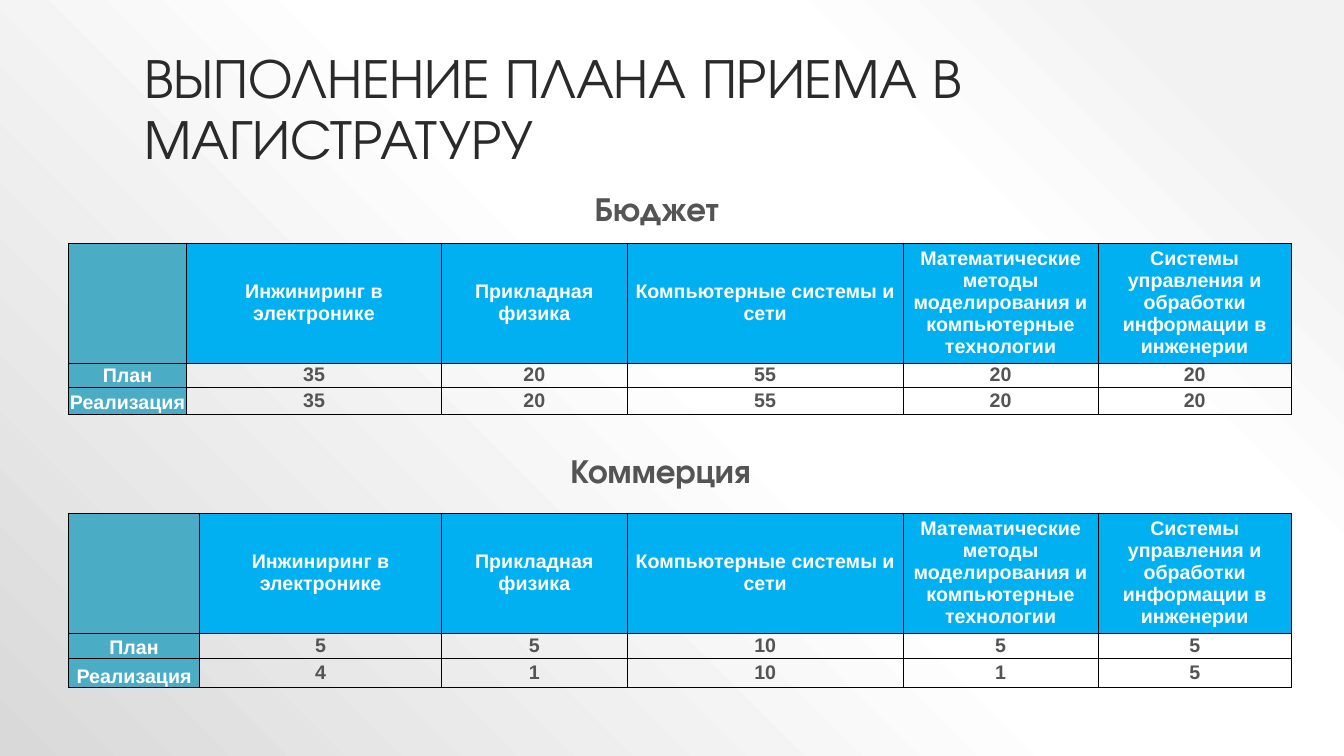
from lxml import etree
from pptx import Presentation
from pptx.dml.color import RGBColor
from pptx.enum.text import MSO_ANCHOR, MSO_AUTO_SIZE, PP_ALIGN
from pptx.oxml import parse_xml
from pptx.oxml.ns import qn
from pptx.util import Inches, Pt

MIDDLE, BOTTOM = MSO_ANCHOR.MIDDLE, MSO_ANCHOR.BOTTOM
LEFT, CENTER = PP_ALIGN.LEFT, PP_ALIGN.CENTER
NO_AUTOFIT, GROW = MSO_AUTO_SIZE.NONE, MSO_AUTO_SIZE.SHAPE_TO_FIT_TEXT

COLORS = {
    "title": "2A2A2A",
    "text": "545454",
    "white": "FFFFFF",
    "header": "00B0F0",
    "label": "4BACC6",
    "border": "000000",
    "mist": "F2F2F2",
    "gray": "D9D9D9",
}
BACKDROP = [(10, "mist"), (28, "white"), (48, "white"), (100, "gray")]
HEADING_FONT, TABLE_FONT = "TeX Gyre Adventor", "Arial"
DRAWING_NS = "http://schemas.openxmlformats.org/drawingml/2006/main"

PROGRAMS = [
    "Инжиниринг в электронике",
    "Прикладная физика",
    "Компьютерные системы и сети",
    "Математические методы моделирования и компьютерные технологии",
    "Системы управления и обработки информации в инженерии",
]
SHARED_WIDTHS = [1.84, 2.74, 1.93, 1.92]


class Page:
    def __init__(self, deck):
        self.slide = deck.slides.add_slide(deck.slide_layouts[5])
        self.shapes = self.slide.shapes

    def backdrop(self, stops):
        """Fill the background with a gradient spreading from the top right corner."""
        self.slide.background.fill.solid()
        marks = "".join(
            f'<a:gs pos="{place * 1000}"><a:srgbClr val="{COLORS[color]}"/></a:gs>'
            for place, color in stops)
        gradient = parse_xml(
            f'<a:gradFill xmlns:a="{DRAWING_NS}" rotWithShape="1">'
            f'<a:gsLst>{marks}</a:gsLst><a:path path="circle">'
            '<a:fillToRect l="100000" b="100000"/></a:path></a:gradFill>')
        properties = self.slide.element.find(".//" + qn("p:bgPr"))
        properties.replace(properties.find(qn("a:solidFill")), gradient)

    def put_text(self, frame, text, size, font, color, bold=False, align=LEFT, spacing=None):
        frame.text = text
        para = frame.paragraphs[0]
        para.alignment = align
        if spacing:
            para.line_spacing = spacing
        for span in para.runs:
            span.font.size = Pt(size)
            span.font.name = font
            span.font.bold = bold
            span.font.color.rgb = RGBColor.from_string(COLORS[color])

    def title(self, text, left, top, width, height):
        box = self.shapes.title
        box.left, box.top = Inches(left), Inches(top)
        box.width, box.height = Inches(width), Inches(height)
        frame = box.text_frame
        frame.word_wrap = True
        frame.auto_size = NO_AUTOFIT
        frame.vertical_anchor = BOTTOM
        self.put_text(frame, text, 40, HEADING_FONT, "title", spacing=0.9)

    def caption(self, text, left, top, width):
        box = self.shapes.add_textbox(Inches(left), Inches(top), Inches(width), Inches(0.46))
        frame = box.text_frame
        frame.word_wrap = False
        frame.auto_size = GROW
        self.put_text(frame, text, 24, HEADING_FONT, "text", bold=True, spacing=0.9)

    def border(self, cell):
        properties = cell._tc.get_or_add_tcPr()
        for place, side in enumerate(("lnL", "lnR", "lnT", "lnB")):
            line = etree.Element(qn(f"a:{side}"), w=str(Pt(0.5)))
            solid = etree.SubElement(line, qn("a:solidFill"))
            etree.SubElement(solid, qn("a:srgbClr"), val=COLORS["border"])
            properties.insert(place, line)

    def cell(self, cell, text, fill=None, anchor=MIDDLE):
        cell.margin_left = cell.margin_right = cell.margin_top = cell.margin_bottom = 0
        cell.vertical_anchor = anchor
        if fill:
            cell.fill.solid()
            cell.fill.fore_color.rgb = RGBColor.from_string(COLORS[fill])
        else:
            cell.fill.background()
        self.put_text(cell.text_frame, text, 14, TABLE_FONT, "white" if fill else "text",
                      bold=True, align=CENTER)
        self.border(cell)

    def table(self, top, widths, heights, rows):
        """Add a table with a header row and a column of row labels."""
        frame = self.shapes.add_table(len(rows), len(widths), Inches(0.68), Inches(top),
                                      Inches(sum(widths)), Inches(sum(heights)))
        table = frame.table
        table.first_row = table.horz_banding = False
        for column, width in zip(table.columns, widths):
            column.width = Inches(width)
        for row, height in zip(table.rows, heights):
            row.height = Inches(height)
        for r, values in enumerate(rows):
            for c, value in enumerate(values):
                fill = "label" if c == 0 else "header" if r == 0 else None
                anchor = BOTTOM if c == 0 else MIDDLE
                self.cell(table.cell(r, c), str(value), fill, anchor)


def main():
    deck = Presentation()
    deck.slide_width, deck.slide_height = Inches(13.33), Inches(7.5)
    page = Page(deck)
    page.backdrop(BACKDROP)
    page.title("ВЫПОЛНЕНИЕ ПЛАНА ПРИЕМА В МАГИСТРАТУРУ", 1.33, 0.3, 10.67, 1.45)

    header = ["", *PROGRAMS]
    page.table(2.41, [1.17, 2.53, *SHARED_WIDTHS], [1.19, 0.24, 0.27], [
        header,
        ["План", 35, 20, 55, 20, 20],
        ["Реализация", 35, 20, 55, 20, 20],
    ])
    page.caption("Бюджет", 5.8, 1.86, 1.57)
    page.table(5.09, [1.3, 2.4, *SHARED_WIDTHS], [1.19, 0.25, 0.29], [
        header,
        ["План", 5, 5, 10, 5, 5],
        ["Реализация", 4, 1, 10, 1, 5],
    ])
    page.caption("Коммерция", 5.56, 4.46, 2.24)
    deck.save("out.pptx")


if __name__ == "__main__":
    main()
